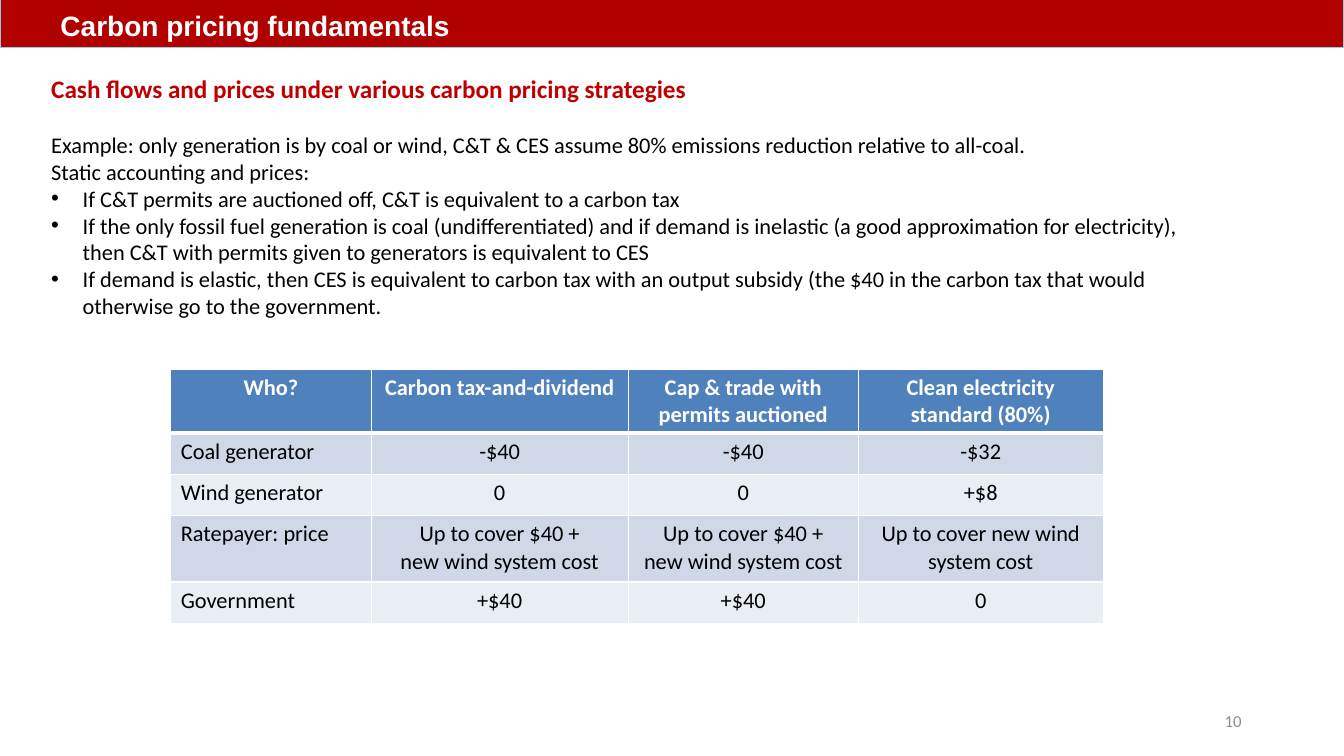
from lxml import etree
from pptx import Presentation
from pptx.dml.color import RGBColor
from pptx.enum.shapes import MSO_SHAPE
from pptx.enum.text import MSO_ANCHOR, PP_ALIGN
from pptx.oxml.ns import qn
from pptx.util import Pt

RECTANGLE = MSO_SHAPE.RECTANGLE
MIDDLE, BOTTOM = MSO_ANCHOR.MIDDLE, MSO_ANCHOR.BOTTOM
LEFT, CENTER, RIGHT = PP_ALIGN.LEFT, PP_ALIGN.CENTER, PP_ALIGN.RIGHT

TITLE = "Carbon pricing fundamentals"
HEADING = "Cash flows and prices under various carbon pricing strategies"
INTRODUCTION = [
    "Example: only generation is by coal or wind, C&T & CES assume 80% emissions "
    "reduction relative to all-coal.",
    "Static accounting and prices:",
]
BULLETS = [
    "If C&T permits are auctioned off, C&T is equivalent to a carbon tax",
    "If the only fossil fuel generation is coal (undifferentiated) and if demand is "
    "inelastic (a good approximation for electricity), then C&T with permits given to "
    "generators is equivalent to CES",
    "If demand is elastic, then CES is equivalent to carbon tax with an output subsidy "
    "(the $40 in the carbon tax that would otherwise go to the government.",
]
COVER_COST = "Up to cover $40 +\nnew wind system cost"
CASH_FLOWS = [
    ["Who?", "Carbon tax-and-dividend", "Cap & trade with permits auctioned",
     "Clean electricity standard (80%)"],
    ["Coal generator", "-$40", "-$40", "-$32"],
    ["Wind generator", "0", "0", "+$8"],
    ["Ratepayer: price", COVER_COST, COVER_COST, "Up to cover new wind system cost"],
    ["Government", "+$40", "+$40", "0"],
]
COLUMN_WIDTHS = [143.1, 183.6, 164.4, 174.9]
ROW_HEIGHTS = [44.9, 29.5, 29.5, 47.6, 29.5]


def color(value):
    return RGBColor.from_string(value)


def format_paragraph(paragraph, size, font_color, bold=False, align=LEFT, font="Calibri"):
    paragraph.alignment = align
    for run in paragraph.runs:
        run.font.name = font
        run.font.size = Pt(size)
        run.font.bold = bold
        run.font.color.rgb = color(font_color)


def add_bullet(paragraph, indent):
    properties = paragraph._p.get_or_add_pPr()
    properties.set("marL", str(Pt(indent)))
    properties.set("indent", str(Pt(-indent)))
    etree.SubElement(properties, qn("a:buFont"), typeface="Arial")
    etree.SubElement(properties, qn("a:buChar"), char="•")


def add_text_box(slide, left, top, width, height):
    frame = slide.shapes.add_textbox(Pt(left), Pt(top), Pt(width), Pt(height)).text_frame
    frame.word_wrap = True
    return frame


def add_banner(slide, width):
    banner = slide.shapes.add_shape(RECTANGLE, 0, 0, width, Pt(33.8))
    banner.shadow.inherit = False
    banner.fill.solid()
    banner.fill.fore_color.rgb = color("B00000")
    banner.line.color.rgb = color("93CDDD")
    banner.line.width = Pt(0)
    frame = banner.text_frame
    frame.margin_left = Pt(43.2)
    frame.vertical_anchor = BOTTOM
    frame.text = TITLE
    format_paragraph(frame.paragraphs[0], 20, "FFFFFF", bold=True, font="Arial")


def add_body(slide):
    frame = add_text_box(slide, 29.5, 49, 850.3, 184.3)
    frame.text = "\n".join([HEADING] + INTRODUCTION + BULLETS)
    heading, *details = frame.paragraphs
    format_paragraph(heading, 18, "C00000", bold=True)
    heading.space_after = Pt(19.5)
    for paragraph in details:
        format_paragraph(paragraph, 16, "000000")
    for paragraph in details[len(INTRODUCTION):]:
        add_bullet(paragraph, 22.5)


def add_borders(cell, bottom_width):
    properties = cell._tc.get_or_add_tcPr()
    for side, width in (("L", 1), ("R", 1), ("T", 1), ("B", bottom_width)):
        line = etree.SubElement(properties, qn(f"a:ln{side}"), w=str(Pt(width)))
        fill = etree.SubElement(line, qn("a:solidFill"))
        etree.SubElement(fill, qn("a:srgbClr"), val="FFFFFF")


def add_cash_flow_table(slide):
    table = slide.shapes.add_table(
        len(ROW_HEIGHTS), len(COLUMN_WIDTHS), Pt(122), Pt(263.6),
        Pt(sum(COLUMN_WIDTHS)), Pt(sum(ROW_HEIGHTS))).table
    for column, width in zip(table.columns, COLUMN_WIDTHS):
        column.width = Pt(width)
    for row_index, texts in enumerate(CASH_FLOWS):
        table.rows[row_index].height = Pt(ROW_HEIGHTS[row_index])
        is_header = row_index == 0
        band = "D0D8E8" if row_index % 2 else "E9EDF4"
        for column_index, text in enumerate(texts):
            cell = table.cell(row_index, column_index)
            cell.text = text
            add_borders(cell, 3 if is_header else 1)
            cell.fill.solid()
            cell.fill.fore_color.rgb = color("4F81BD" if is_header else band)
            align = CENTER if is_header or column_index else LEFT
            for paragraph in cell.text_frame.paragraphs:
                format_paragraph(paragraph, 16, "FFFFFF" if is_header else "000000",
                                 bold=is_header, align=align)


def add_slide_number(slide):
    frame = add_text_box(slide, 678, 500.4, 216, 28.8)
    frame.vertical_anchor = MIDDLE
    frame.text = "10"
    format_paragraph(frame.paragraphs[0], 12, "8C8C8C", align=RIGHT)


def main():
    presentation = Presentation()
    presentation.slide_width, presentation.slide_height = Pt(960), Pt(540)
    slide = presentation.slides.add_slide(presentation.slide_layouts[6])

    # Title band and page number
    add_banner(slide, presentation.slide_width)
    add_slide_number(slide)
    # Explanation
    add_body(slide)
    # Cash flows by strategy
    add_cash_flow_table(slide)

    presentation.save("out.pptx")


if __name__ == "__main__":
    main()
